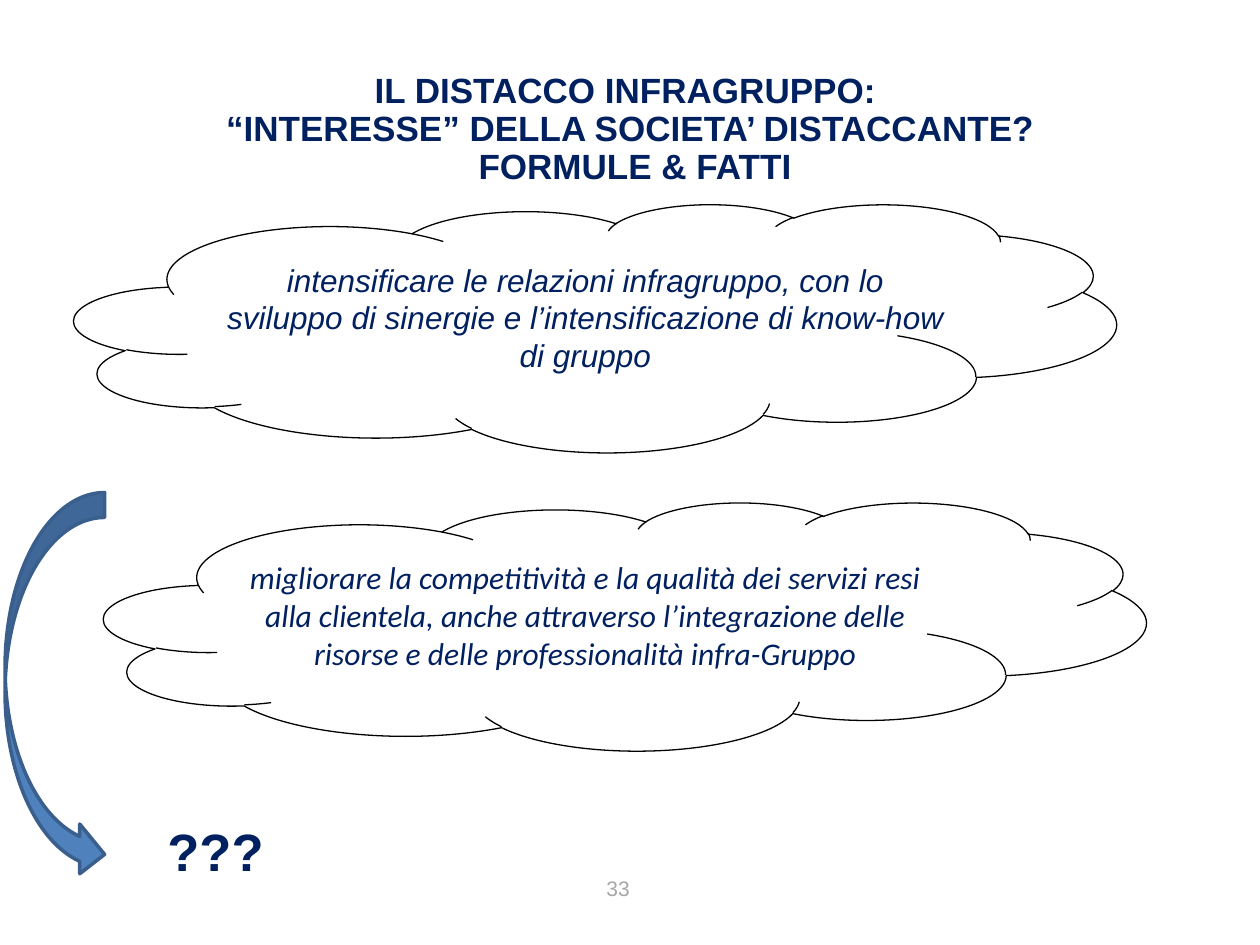
from pptx import Presentation
from pptx.dml.color import RGBColor
from pptx.enum.shapes import MSO_SHAPE
from pptx.enum.text import MSO_ANCHOR, PP_ALIGN
from pptx.util import Pt

NAVY = "002060"
HEADING = {"size": Pt(20), "bold": True}
CLOUD_TEXT = {"size": Pt(18), "italic": True}
CENTER, LEFT = PP_ALIGN.CENTER, PP_ALIGN.LEFT
TOP, MIDDLE = MSO_ANCHOR.TOP, MSO_ANCHOR.MIDDLE

SHAPES = [
    (MSO_SHAPE.CLOUD, (42.5, 116.6, 595.4, 141.8), "FFFFFF", "000000", 0.75),
    (MSO_SHAPE.CLOUD, (59.5, 287, 595.4, 141.8), "FFFFFF", "000000", 0.75),
    (MSO_SHAPE.CURVED_RIGHT_ARROW, (2.9, 281.5, 56.9, 221), "4F81BD", "3A5F8C", 2),
]

TEXTS = [
    (["33"], (269.3, 496.8, 167.8, 28.8), CENTER, TOP, 1,
     {"name": "Arial", "size": Pt(12)}, "A6A6A6"),
    (["IL DISTACCO INFRAGRUPPO:  ",
      "“INTERESSE” DELLA SOCIETA’ DISTACCANTE? ",
      "FORMULE & FATTI"],
     (42.5, 43.2, 640.8, 62.6), CENTER, MIDDLE, 0.9,
     {"name": "Arial", **HEADING}, NAVY),
    (["intensificare le relazioni infragruppo, con lo sviluppo di sinergie "
      "e l’intensificazione di know-how di gruppo"],
     (121.7, 145.4, 425.5, 72.7), CENTER, TOP, 1,
     {"name": "Arial", **CLOUD_TEXT}, NAVY),
    (["migliorare la competitività e la qualità dei servizi resi alla clientela, "
      "anche attraverso l’integrazione delle risorse e delle professionalità infra-Gruppo"],
     (121.7, 315.4, 425.5, 72.7), CENTER, TOP, 1,
     {"name": "Calibri", **CLOUD_TEXT}, NAVY),
    (["???"], (88.6, 457.2, 481, 62.6), LEFT, MIDDLE, 0.9,
     {"name": "Arial", "size": Pt(30), "bold": True}, NAVY),
]


def color(value):
    return RGBColor.from_string(value)


def add_outline(page, preset, place, fill, line, width):
    shape = page.shapes.add_shape(preset, *map(Pt, place))
    shape.shadow.inherit = False
    shape.fill.solid()
    shape.fill.fore_color.rgb = color(fill)
    shape.line.color.rgb = color(line)
    shape.line.width = Pt(width)


def add_text(page, lines, place, alignment, anchor, spacing, font, ink):
    box = page.shapes.add_textbox(*map(Pt, place))
    frame = box.text_frame
    frame.word_wrap = True
    frame.vertical_anchor = anchor
    frame.text = "\n".join(lines)
    for para in frame.paragraphs:
        para.alignment = alignment
        para.line_spacing = spacing
        for span in para.runs:
            for key, value in font.items():
                setattr(span.font, key, value)
            span.font.color.rgb = color(ink)


def main():
    deck = Presentation()
    deck.slide_width, deck.slide_height = Pt(720), Pt(540)
    page = deck.slides.add_slide(deck.slide_layouts[6])
    for shape in SHAPES:
        add_outline(page, *shape)
    for text in TEXTS:
        add_text(page, *text)
    deck.save("out.pptx")


if __name__ == "__main__":
    main()
